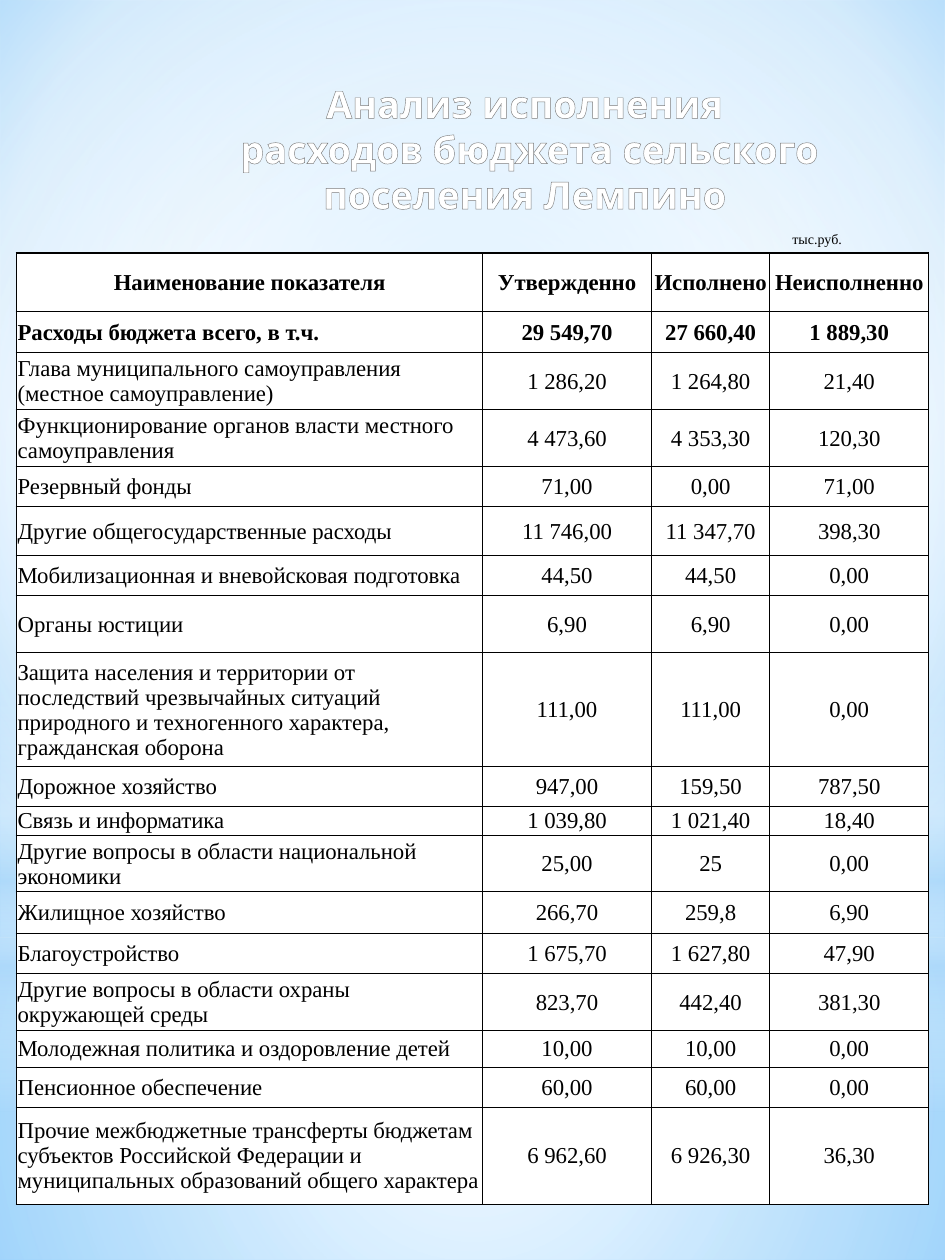
from dataclasses import dataclass

from lxml.etree import SubElement
from pptx import Presentation
from pptx.dml.color import RGBColor as RGB
from pptx.enum.shapes import MSO_SHAPE as Kind
from pptx.enum.text import MSO_ANCHOR as Anchor, MSO_AUTO_SIZE as Fit, PP_ALIGN as Align
from pptx.oxml import parse_xml
from pptx.oxml.ns import nsdecls, qn
from pptx.util import Inches, Pt


@dataclass(frozen=True)
class Theme:
    white: str = "FFFFFF"
    black: str = "000000"
    pale: str = "B4DCFA"
    sky: str = "9ED5FF"
    deep: str = "5BB9FF"
    gray: str = "7F7F7F"
    edge: str = "7D7D7D"
    head: str = "Karla"
    body: str = "Times New Roman"
    title: float = 21.6
    unit: float = 8
    cell: float = 13
    thin: float = 0.5
    thick: float = 1


T = Theme()
MID = (50, 50, 50, 50)
COLS = (3.7, 1.34, 0.94, 1.26)
ROWS = (
    (0.46, "Наименование показателя", "Утвержденно", "Исполнено", "Неисполненно"),
    (0.33, "Расходы бюджета всего, в т.ч.", "29 549,70", "27 660,40", "1 889,30"),
    (0.45, "Глава муниципального самоуправления (местное самоуправление)",
     "1 286,20", "1 264,80", "21,40"),
    (0.45, "Функционирование органов власти местного самоуправления",
     "4 473,60", "4 353,30", "120,30"),
    (0.32, "Резервный фонды", "71,00", "0,00", "71,00"),
    (0.39, "Другие общегосударственные расходы", "11 746,00", "11 347,70", "398,30"),
    (0.32, "Мобилизационная и вневойсковая подготовка", "44,50", "44,50", "0,00"),
    (0.45, "Органы юстиции", "6,90", "6,90", "0,00"),
    (0.9, "Защита населения и территории от последствий чрезвычайных ситуаций "
     "природного и техногенного характера, гражданская оборона",
     "111,00", "111,00", "0,00"),
    (0.32, "Дорожное хозяйство", "947,00", "159,50", "787,50"),
    (0.23, "Связь и информатика", "1 039,80", "1 021,40", "18,40"),
    (0.45, "Другие вопросы в области национальной экономики", "25,00", "25", "0,00"),
    (0.33, "Жилищное хозяйство", "266,70", "259,8", "6,90"),
    (0.32, "Благоустройство", "1 675,70", "1 627,80", "47,90"),
    (0.45, "Другие вопросы в области охраны окружающей среды",
     "823,70", "442,40", "381,30"),
    (0.29, "Молодежная политика и оздоровление детей", "10,00", "10,00", "0,00"),
    (0.32, "Пенсионное обеспечение", "60,00", "60,00", "0,00"),
    (0.77, "Прочие межбюджетные трансферты бюджетам субъектов Российской Федерации "
     "и муниципальных образований общего характера",
     "6 962,60", "6 926,30", "36,30"),
)


def blend(stops, to=None):
    """Gradient fill from (place, colour, opacity) stops: round if to is given, else downward."""
    marks = "".join(
        f'<a:gs pos="{pos * 1000}"><a:srgbClr val="{hue}">'
        f'<a:alpha val="{alpha * 1000}"/></a:srgbClr></a:gs>'
        for pos, hue, alpha in stops)
    if to:
        sides = " ".join(f'{side}="{val * 1000}"' for side, val in zip("ltrb", to))
        shade = f'<a:path path="circle"><a:fillToRect {sides}/></a:path>'
    else:
        shade = '<a:lin ang="5400000" scaled="0"/>'
    return parse_xml(f'<a:gradFill {nsdecls("a")} rotWithShape="1">'
                     f'<a:gsLst>{marks}</a:gsLst>{shade}</a:gradFill>')


def swap(fill, root, new):
    """Put a gradient where a solid fill goes."""
    fill.solid()
    old = root.find(".//" + qn("a:solidFill"))
    old.getparent().replace(old, new)


def stroke(root, tag, hue, width):
    line = SubElement(root, qn(tag), w=str(Pt(width)))
    SubElement(SubElement(line, qn("a:solidFill")), qn("a:srgbClr"), val=hue)
    return line


def glow(slide, kind, top, high, stops, to=None):
    """Full-width soft patch of light."""
    shape = slide.shapes.add_shape(kind, 0, Inches(top), Inches(7.5), Inches(high))
    shape.shadow.inherit = False
    shape.line.fill.background()
    swap(shape.fill, shape.element.spPr, blend(stops, to))


def style(para, face, size, bold=False, align=Align.LEFT):
    para.alignment = align
    font = para.font
    font.name, font.size, font.bold = face, Pt(size), bold
    font.color.rgb = RGB.from_string(T.black)


def label(slide, box, lines, *look):
    frame = slide.shapes.add_textbox(*map(Inches, box)).text_frame
    frame.word_wrap = True
    frame.auto_size = Fit.SHAPE_TO_FIT_TEXT
    frame.text = "\n".join(lines)
    for para in frame.paragraphs:
        style(para, *look)
    return frame


def shine(frame):
    """Outlined letters with a gradient fill."""
    stops = [(pos, T.gray if pos == 50 else T.white, 100) for pos in (0, 9, 50, 79, 100)]
    for para in frame.paragraphs:
        for run in para.runs:
            props = run._r.get_or_add_rPr()
            stroke(props, "a:ln", T.edge, 0.83)
            props.append(blend(stops))


def border(cell, row, col):
    props = cell._tc.get_or_add_tcPr()
    outer = {"L": col == 0, "R": col == len(COLS) - 1, "T": row == 0, "B": False}
    for spot, (side, rim) in enumerate(outer.items()):
        props.insert(spot, stroke(props, f"a:ln{side}", T.black, T.thick if rim else T.thin))


def grid(slide):
    table = slide.shapes.add_table(len(ROWS), len(COLS), Inches(0.13), Inches(2.01),
                                   Inches(sum(COLS)), Inches(sum(r[0] for r in ROWS))).table
    table.first_row = table.horz_banding = False
    for col, wide in zip(table.columns, COLS):
        col.width = Inches(wide)
    for row, (high, *texts) in enumerate(ROWS):
        table.rows[row].height = Inches(high)
        for col, text in enumerate(texts):
            cell = table.cell(row, col)
            cell.margin_left = cell.margin_right = cell.margin_top = Inches(0.01)
            cell.margin_bottom = 0
            cell.vertical_anchor = Anchor.MIDDLE
            cell.fill.solid()
            cell.fill.fore_color.rgb = RGB.from_string(T.white)
            cell.text = text
            align = Align.LEFT if row and not col else Align.CENTER
            style(cell.text_frame.paragraphs[0], T.body, T.cell, row < 2, align)
            border(cell, row, col)


def main():
    deck = Presentation()
    deck.slide_width, deck.slide_height = Inches(7.5), Inches(10)
    slide = deck.slides.add_slide(deck.slide_layouts[6])
    swap(slide.background.fill, slide.element,
         blend([(0, T.sky, 100), (60, T.white, 100), (100, T.deep, 100)], (20, 10, 20, 60)))
    glow(slide, Kind.RECTANGLE, 7.44, 2.56,
         [(0, T.white, 91), (37, T.white, 76), (100, T.pale, 79)], MID)
    glow(slide, Kind.RECTANGLE, 0, 7.44,
         [(0, T.white, 89), (48, T.white, 62), (100, T.pale, 79)], MID)
    glow(slide, Kind.RECTANGLE, 5.49, 3.33,
         [(0, T.white, 0), (29, T.white, 30), (45, T.pale, 40),
          (55, T.white, 26), (65, T.pale, 60), (100, T.white, 0)])
    glow(slide, Kind.OVAL, 2.33, 7.44, [(0, T.white, 100), (56, T.white, 0)], MID)
    shine(label(slide, (1.23, 0.59, 5.87, 1.19),
                ("Анализ исполнения", " расходов бюджета сельского поселения Лемпино"),
                T.head, T.title, True, Align.CENTER))
    label(slide, (6.19, 1.78, 0.91, 0.24), ("тыс.руб.",), T.body, T.unit)
    grid(slide)
    deck.save("out.pptx")


if __name__ == "__main__":
    main()
